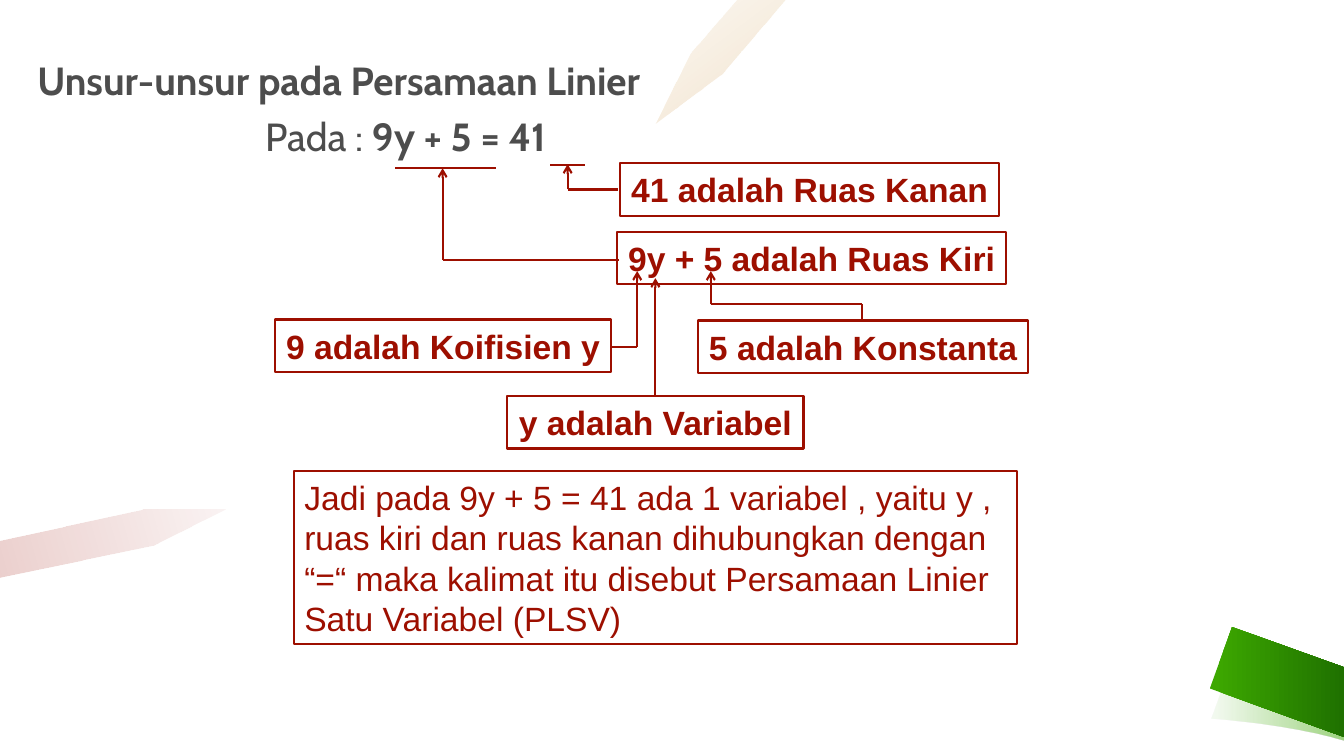
import dataclasses
import typing

import pptx
import pptx.dml.color
import pptx.enum.dml
import pptx.enum.shapes
import pptx.enum.text
import pptx.oxml
import pptx.oxml.ns
import pptx.util

Inches = pptx.util.Inches
Pt = pptx.util.Pt
Align = pptx.enum.text.PP_ALIGN
Point = typing.Tuple[float, float]

RED = "9D0F00"
GREY = "4D4D4D"


@dataclasses.dataclass
class Stop:
    place: float
    color: str
    alpha: int = 100


@dataclasses.dataclass
class Pencil:
    points: typing.List[Point]
    stops: typing.List[Stop]
    angle: int


@dataclasses.dataclass
class Label:
    text: str
    left: float
    top: float
    width: float
    height: float = 0.52
    bold: bool = True


@dataclasses.dataclass
class Route:
    points: typing.List[Point]
    arrow: bool = True


def rgb(code: str) -> pptx.dml.color.RGBColor:
    return pptx.dml.color.RGBColor.from_string(code)


def child(parent, tag: str, **attrs: str):
    node = pptx.oxml.parse_xml(f"<{tag} {pptx.oxml.ns.nsdecls('a')}/>")
    for name, value in attrs.items():
        node.set(name, value)
    parent.append(node)
    return node


def curve(a: Point, b: Point, c: Point, d: Point) -> typing.List[Point]:
    """Sample a cubic curve."""
    result = []
    for step in range(13):
        t = step / 12
        parts = ((1 - t) ** 3, 3 * t * (1 - t) ** 2, 3 * t * t * (1 - t), t ** 3)
        result.append(tuple(sum(w * p[axis] for w, p in zip(parts, (a, b, c, d)))
                            for axis in (0, 1)))
    return result


def draw_pencil(shapes, pencil: Pencil) -> None:
    spots = [(Inches(x), Inches(y)) for x, y in pencil.points]
    form = shapes.build_freeform(*spots[0])
    form.add_line_segments(spots[1:], close=True)
    shape = form.convert_to_shape()
    shape.shadow.inherit = False
    shape.line.fill.background()
    shape.fill.gradient()
    shape.fill.gradient_angle = 360 - pencil.angle
    nodes = shape.element.spPr.findall(".//" + pptx.oxml.ns.qn("a:gs"))
    for stop, mark, node in zip(pencil.stops, shape.fill.gradient_stops, nodes):
        mark.position = stop.place
        mark.color.rgb = rgb(stop.color)
        if stop.alpha < 100:
            child(node[0], "a:alpha", val=str(stop.alpha * 1000))


def draw_label(shapes, label: Label) -> None:
    shape = shapes.add_shape(
        pptx.enum.shapes.MSO_SHAPE.RECTANGLE, Inches(label.left),
        Inches(label.top), Inches(label.width), Inches(label.height))
    shape.shadow.inherit = False
    shape.fill.background()
    shape.line.color.rgb = rgb(RED)
    shape.line.width = Pt(1.5)
    frame = shape.text_frame
    frame.word_wrap = not label.bold
    frame.text = label.text
    para = frame.paragraphs[0]
    para.alignment = Align.CENTER if label.bold else Align.LEFT
    set_font(para.font, "Arial", 24, RED, label.bold)


def draw_route(shapes, route: Route) -> None:
    pairs = list(zip(route.points, route.points[1:]))
    for index, (start, end) in enumerate(pairs):
        line = shapes.add_connector(
            pptx.enum.shapes.MSO_CONNECTOR.STRAIGHT,
            *(Inches(value) for value in start + end))
        line.line.color.rgb = rgb(RED)
        line.line.width = Pt(1.5)
        if route.arrow and index == len(pairs) - 1:
            child(line.line._get_or_add_ln(), "a:tailEnd", type="arrow")
        child(line.element.spPr, "a:effectLst")


def set_font(font, name: str, size: int, color: str,
             bold: typing.Optional[bool]) -> None:
    font.name = name
    font.size = Pt(size)
    font.color.rgb = rgb(color)
    font.bold = bold


def fill_body(body) -> None:
    body.left, body.top = Inches(0.27), Inches(0.56)
    body.width, body.height = Inches(11.29), Inches(1.08)
    frame = body.text_frame
    frame.auto_size = pptx.enum.text.MSO_AUTO_SIZE.NONE
    frame.vertical_anchor = pptx.enum.text.MSO_ANCHOR.TOP
    frame.word_wrap = True
    head, sum_line = frame.paragraphs[0], frame.add_paragraph()
    head.text = "Unsur-unsur pada Persamaan Linier"
    for text, bold in (("Pada : ", False), ("9y + 5 = 41", True)):
        run = sum_line.add_run()
        run.text = text
        run.font.bold = bold
    for para, margin, gap, bold in ((head, 0, 0, True), (sum_line, 2.26, 10, None)):
        props = para._p.get_or_add_pPr()
        props.set("marL", str(Inches(margin)))
        props.set("indent", "0")
        child(props, "a:buNone")
        para.alignment = Align.LEFT
        para.line_spacing = 0.9
        para.space_before = Pt(gap)
        set_font(para.font, "Cabin", 28, GREY, bold)


PENCILS = [
    Pencil(curve((12.02, 7.13), (12.02, 7.13), (12.78, 7.18), (13.33, 7.35))
           + curve((13.33, 6.68), (12.72, 6.51), (12.24, 6.52), (12.24, 6.52)),
           [Stop(0.03, "3DA800", 6), Stop(1, "3DA800", 50)], 0),
    Pencil([(13.33, 6.62), (12.22, 6.22), (12, 6.83), (13.33, 7.31)],
           [Stop(0.03, "3DA800"), Stop(1, "1F7100")], 0),
    Pencil([(7.79, 0), (7.31, 0), (6.85, 0.53), (6.5, 1.23), (7.16, 0.74)],
           [Stop(0, "C07400", 5), Stop(1, "C07400", 20)], 53),
    Pencil([(2.24, 5.05), (1.42, 5.05), (0, 5.36), (0, 5.73), (1.53, 5.41)],
           [Stop(0, RED, 5), Stop(1, RED, 20)], 164),
]

LABELS = [
    Label("9y + 5 adalah Ruas Kiri", 6.12, 2.3, 3.86),
    Label("41 adalah Ruas Kanan", 6.15, 1.62, 3.76),
    Label("y adalah Variabel", 5.03, 3.93, 2.94),
    Label("9 adalah Koifisien y", 2.73, 3.17, 3.33),
    Label("5 adalah Konstanta", 6.92, 3.18, 3.28),
    Label("Jadi pada 9y + 5 = 41 ada 1 variabel , yaitu y , ruas kiri dan "
          "ruas kanan dihubungkan dengan “=“ maka kalimat itu disebut "
          "Persamaan Linier Satu Variabel (PLSV)", 2.92, 4.67, 7.17, 1.72, False),
]

ROUTES = [
    Route([(5.46, 1.64), (5.8, 1.64)], False),
    Route([(6.13, 1.88), (5.63, 1.88), (5.63, 1.63)]),
    Route([(3.92, 1.67), (4.92, 1.67)], False),
    Route([(6.14, 2.58), (4.39, 2.58), (4.39, 1.67)]),
    Route([(6.07, 3.44), (6.32, 3.44), (6.32, 2.69)]),
    Route([(6.5, 3.92), (6.5, 2.76)]),
    Route([(8.55, 3.19), (8.55, 3.02), (7.05, 3.02), (7.05, 2.69)]),
]


def main() -> None:
    deck = pptx.Presentation()
    deck.slide_width, deck.slide_height = Inches(13.33), Inches(7.5)
    slide = deck.slides.add_slide(deck.slide_layouts[1])
    shapes = slide.shapes

    # Heading and equation
    title = shapes.title.element
    title.getparent().remove(title)
    fill_body(slide.placeholders[1])

    # Pencils at the edges
    for pencil in PENCILS:
        draw_pencil(shapes, pencil)

    # Labels and their arrows
    for label in LABELS:
        draw_label(shapes, label)
    for route in ROUTES:
        draw_route(shapes, route)

    deck.save("out.pptx")


if __name__ == "__main__":
    main()
